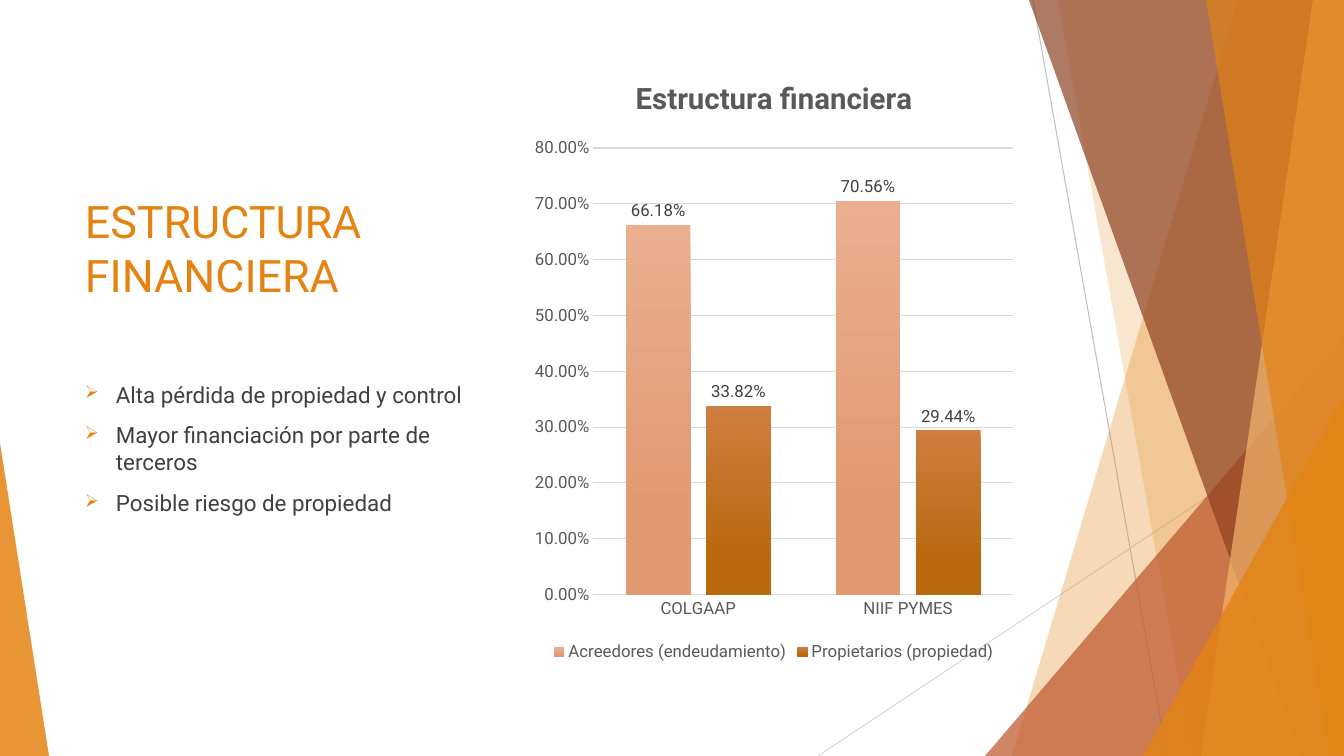
"""Build the financial structure slide: title, bullets, column chart and facets."""
from lxml import etree
from pptx import Presentation, util as u
from pptx.chart.data import CategoryChartData
from pptx.dml.color import RGBColor
from pptx.enum import chart as ch, shapes, text
from pptx.oxml.ns import qn

PX = 914400 / 100.8
WIDE, HIGH = 1344, 756
FONT = "Roboto"
ORANGE, DARK, GREY, PALE = "E48312", "404040", "595959", "D9D9D9"

TITLE = "ESTRUCTURA FINANCIERA"
POINTS = [
    "Alta pérdida de propiedad y control",
    "Mayor financiación por parte de terceros",
    "Posible riesgo de propiedad",
]
HEAD = "Estructura financiera"
CATS = ["COLGAAP", "NIIF PYMES"]
SERIES = [
    ("Acreedores (endeudamiento)", (0.6618, 0.7056), ("EBAF8F", "E19972")),
    ("Propietarios (propiedad)", (0.3382, 0.2944), ("CD7E40", "B96A0F")),
]
RULES = [
    ((1033, 0, 1167, 756), "BFBFBF"),
    ((1344, 406, 818, 756), PALE),
]
# Bands give top x and bottom x; wedges give a box and the apex side.
FACETS = [
    ("band", (1238, 1012), ORANGE, 30),
    ("band", (1058, 1192), ORANGE, 20),
    ("wedge", (985, 336, 359, 420, 1), "BD582C", 72),
    ("band", (1029, 1301), "8E4221", 70),
    ("band", (1313, 1201), "F3B56C", 70),
    ("band", (1206, 1329), ORANGE, 65),
    ("wedge", (1143, 396, 201, 360, 1), ORANGE, 80),
    ("wedge", (0, 443, 49, 313, 0), ORANGE, 85),
]


def px(*nums):
    return [u.Emu(round(n * PX)) for n in nums]


def rgb(code):
    return RGBColor.from_string(code)


def style(font, size, color, bold=False):
    font.name, font.size, font.bold = FONT, u.Pt(size), bold
    font.color.rgb = rgb(color)


def add_rule(slide, ends, color):
    rule = slide.shapes.add_connector(shapes.MSO_CONNECTOR.STRAIGHT, *px(*ends))
    rule.line.color.rgb = rgb(color)
    rule.line.width = u.Pt(0.75)
    etree.SubElement(rule._element.spPr, qn("a:effectLst"))


def add_facet(slide, kind, geo, color, alpha):
    if kind == "band":
        top, base = geo
        pen = slide.shapes.build_freeform(top, 0, PX)
        pen.add_line_segments([(WIDE, 0), (WIDE, HIGH), (base, HIGH)])
        facet = pen.convert_to_shape()
    else:
        *box, apex = geo
        facet = slide.shapes.add_shape(
            shapes.MSO_SHAPE.ISOSCELES_TRIANGLE, *px(*box))
        facet.adjustments[0] = apex
    facet.shadow.inherit = False
    facet.fill.solid()
    facet.fill.fore_color.rgb = rgb(color)
    facet.line.fill.background()
    tint = facet._element.spPr.find(".//" + qn("a:srgbClr"))
    etree.SubElement(tint, qn("a:alpha"), val=str(alpha * 1000))


def add_text(slide, box, lines, size, color, anchor):
    frame = slide.shapes.add_textbox(*px(*box)).text_frame
    frame.word_wrap = True
    frame.vertical_anchor = anchor
    frame.text = "\n".join(lines)
    for para in frame.paragraphs:
        style(para.runs[0].font, size, color)
    return frame.paragraphs


def add_bullet(para):
    para.space_before = u.Pt(10)
    props = para._p.get_or_add_pPr()
    indent = px(31)[0]
    props.set("marL", str(indent))
    props.set("indent", str(-indent))
    tint = etree.SubElement(props, qn("a:buClr"))
    etree.SubElement(tint, qn("a:srgbClr"), val=ORANGE)
    etree.SubElement(props, qn("a:buSzPct"), val="80000")
    etree.SubElement(props, qn("a:buChar"), char="➢")


def add_chart(slide, box):
    data = CategoryChartData(number_format="0.00%")
    data.categories = CATS
    for name, vals, _ in SERIES:
        data.add_series(name, vals)
    chart = slide.shapes.add_chart(
        ch.XL_CHART_TYPE.COLUMN_CLUSTERED, *px(*box), data).chart
    style(chart.font, 10, "000000")

    chart.has_title = True
    head = chart.chart_title.text_frame
    head.text = HEAD
    style(head.paragraphs[0].runs[0].font, 21, GREY, True)
    chart.has_legend = True
    chart.legend.position = ch.XL_LEGEND_POSITION.BOTTOM
    chart.legend.include_in_layout = False
    style(chart.legend.font, 12, GREY)

    cat, val = chart.category_axis, chart.value_axis
    for axis in (cat, val):
        axis.major_tick_mark = axis.minor_tick_mark = ch.XL_TICK_MARK.NONE
        style(axis.tick_labels.font, 12, GREY)
    cat.format.line.color.rgb = rgb(PALE)
    cat.format.line.width = u.Pt(1)
    val.format.line.fill.background()
    val.minimum_scale, val.maximum_scale, val.major_unit = 0, 0.8, 0.1
    val.tick_labels.number_format = "0.00%"
    val.tick_labels.number_format_is_linked = False
    val.major_gridlines.format.line.color.rgb = rgb(PALE)
    val.major_gridlines.format.line.width = u.Pt(0.75)

    plot = chart.plots[0]
    plot.gap_width, plot.overlap = 100, -24
    plot.vary_by_categories = False
    for bars, (_, _, shades) in zip(plot.series, SERIES):
        fill = bars.format.fill
        fill.gradient()
        fill.gradient_angle = 270
        for stop, shade, place in zip(fill.gradient_stops, shades, (0, 0.78)):
            stop.color.rgb = rgb(shade)
            stop.position = place
        tags = bars.data_labels
        tags.show_value = True
        tags.number_format = "0.00%"
        tags.number_format_is_linked = False
        tags.position = ch.XL_LABEL_POSITION.OUTSIDE_END
        style(tags.font, 12, DARK)


def main():
    deck = Presentation()
    deck.slide_width, deck.slide_height = px(WIDE, HIGH)
    slide = deck.slides.add_slide(deck.slide_layouts[6])
    for rule in RULES:
        add_rule(slide, *rule)
    for facet in FACETS:
        add_facet(slide, *facet)
    add_text(slide, (75, 165, 425, 141), [TITLE], 32, ORANGE,
             text.MSO_ANCHOR.BOTTOM)
    for para in add_text(slide, (75, 306, 425, 285), POINTS, 16, DARK,
                         text.MSO_ANCHOR.MIDDLE):
        add_bullet(para)
    add_chart(slide, (525, 56, 498, 610))
    deck.save("out.pptx")


if __name__ == "__main__":
    main()
